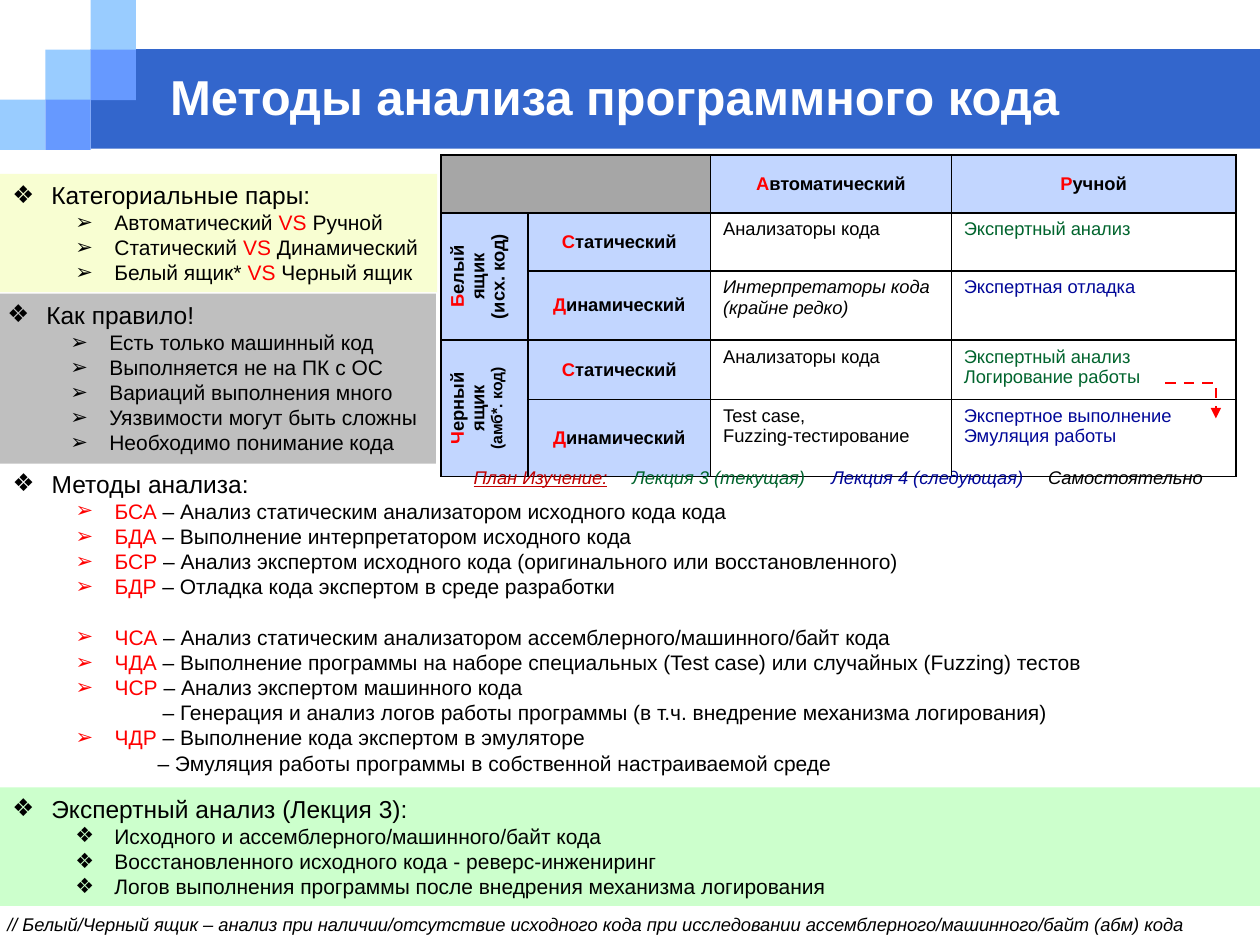
from lxml import etree
from pptx import Presentation
from pptx.dml.color import RGBColor
from pptx.enum.dml import MSO_LINE_DASH_STYLE as DASH
from pptx.enum.shapes import MSO_CONNECTOR as CONNECTOR, MSO_SHAPE as SHAPE
from pptx.enum.text import MSO_ANCHOR as ANCHOR, MSO_AUTO_SIZE as AUTO_SIZE, PP_ALIGN as ALIGN
from pptx.oxml.ns import qn
from pptx.util import Inches, Pt

COLORS = {
    "band": "3366CC", "light": "99CCFF", "medium": "6699FF", "white": "FFFFFF",
    "black": "000000", "red": "FF0000", "plan": "C00000", "green": "00642D",
    "blue": "000798", "cream": "F8FED2", "gray": "BFBFBF", "mint": "CCFFCC",
    "corner": "A6A6A6", "header": "C2D6FF",
}
FONT = "Arial"
DIAMOND, ARROW = "❖", "➢"


def rgb(name):
    """Return the named palette colour."""
    return RGBColor.from_string(COLORS[name])


def add_child(parent, tag, **attributes):
    """Append a DrawingML element and return it."""
    return etree.SubElement(parent, qn(tag), attributes)


def place(shape, left, top, width, height):
    """Move and size a shape, in inches."""
    shape.left, shape.top = Inches(left), Inches(top)
    shape.width, shape.height = Inches(width), Inches(height)


def add_run(paragraph, text, size, color="black", bold=False, italic=False):
    """Add one formatted run."""
    run = paragraph.add_run()
    run.text = text
    font = run.font
    font.name, font.size, font.bold, font.italic = FONT, Pt(size), bold, italic
    font.color.rgb = rgb(color)
    return run


def add_marked(paragraph, text, size, color="black", **style):
    """Add runs, with the parts in square brackets in red."""
    for index, part in enumerate(text.replace("]", "[").split("[")):
        if part:
            add_run(paragraph, part, size, "red" if index % 2 else color, **style)


def set_bullet(paragraph, margin, indent, bullet):
    """Set the indents and the bullet of a paragraph, None for no bullet."""
    properties = paragraph._p.get_or_add_pPr()
    properties.set("marL", str(Inches(margin)))
    properties.set("indent", str(Inches(indent)))
    if bullet:
        add_child(properties, "a:buFont", typeface=FONT)
        add_child(properties, "a:buChar", char=bullet)
    else:
        add_child(properties, "a:buNone")


def add_rectangle(slide, box, color):
    """Add a plain filled rectangle."""
    shape = slide.shapes.add_shape(SHAPE.RECTANGLE, *map(Inches, box))
    shape.shadow.inherit = False
    shape.fill.solid()
    shape.fill.fore_color.rgb = rgb(color)
    shape.line.fill.background()
    return shape


def fill_list(shape, heading, items, bullet=ARROW):
    """Write a heading and its items; an item is text, or (text, margin, space before)."""
    frame = shape.text_frame
    frame.word_wrap, frame.auto_size = True, AUTO_SIZE.SHAPE_TO_FIT_TEXT
    frame.vertical_anchor = ANCHOR.TOP
    entries = [item if isinstance(item, tuple) else (item, None, 0) for item in items]
    for index, (text, margin, gap) in enumerate([(heading, None, 0)] + entries):
        paragraph = frame.add_paragraph() if index else frame.paragraphs[0]
        paragraph.alignment = ALIGN.LEFT
        paragraph.level = min(index, 1)
        paragraph.space_before = Pt(gap)
        if margin:
            set_bullet(paragraph, margin, 0, None)
        elif index:
            set_bullet(paragraph, 0.81, -0.31, bullet)
        else:
            set_bullet(paragraph, 0.31, -0.31, DIAMOND)
        add_marked(paragraph, text, 12 if index else 14)


def build_header(slide, left, top):
    """Draw the title band with its stair of squares and set the title."""
    width, height = 0.36, 0.4
    add_rectangle(slide, (left + 2 * width, top + 0.39, 9.28, 0.79), "band")
    for column, row, color in [(0, 2, "light"), (1, 1, "light"), (2, 0, "light"),
                               (2, 1, "medium"), (1, 2, "medium")]:
        box = (left + column * width, top + row * 0.395, width, height)
        add_rectangle(slide, box, color)
    title = slide.shapes.title
    place(title, left + 1.25, top + 0.5, 8.08, 0.53)
    frame = title.text_frame
    frame.vertical_anchor = ANCHOR.MIDDLE
    frame.paragraphs[0].alignment = ALIGN.LEFT
    add_run(frame.paragraphs[0], "Методы анализа программного кода", 28, "white", bold=True)
    slide.shapes._spTree.append(title._element)


def format_cell(cell, fill, right_border=1):
    """Give a cell its borders and fill."""
    properties = cell._tc.get_or_add_tcPr()
    for side in "LRTB":
        width = Pt(right_border if side == "R" else 1)
        line = add_child(properties, "a:ln" + side, w=str(width))
        solid = add_child(line, "a:solidFill")
        add_child(solid, "a:srgbClr", val=COLORS["black"])
    cell.fill.solid()
    cell.fill.fore_color.rgb = rgb(fill)


def write_cell(cell, lines, alignment, color="black", sizes=(10.5, 10.5), **style):
    """Write one paragraph for each line."""
    frame = cell.text_frame
    for index, line in enumerate(lines):
        paragraph = frame.add_paragraph() if index else frame.paragraphs[0]
        paragraph.alignment = alignment
        add_marked(paragraph, line, sizes[index], color, **style)


def build_matrix(slide, left, top):
    """Build the table of box kinds against analysis kinds."""
    widths, heights = [0.69, 1.45, 1.91, 2.26], [0.46, 0.46, 0.55, 0.47, 0.51]
    table = slide.shapes.add_table(
        len(heights), len(widths), Inches(left), Inches(top),
        Inches(sum(widths)), Inches(sum(heights))).table
    for column, width in zip(table.columns, widths):
        column.width = Inches(width)
    for row, height in zip(table.rows, heights):
        row.height = Inches(height)
    for row in range(len(heights)):
        for column in range(len(widths)):
            fill = "header" if row == 0 or column < 2 else "white"
            if row == 0 and column < 2:
                fill = "corner"
            format_cell(table.cell(row, column), fill, 1.5 if row and not column else 1)
    table.cell(0, 0).merge(table.cell(0, 1))

    labels = {(0, 2): "[А]втоматический", (0, 3): "[Р]учной"}
    labels.update({(row, 1): "[С]татический" if row % 2 else "[Д]инамический"
                   for row in range(1, 5)})
    for position, text in labels.items():
        cell = table.cell(*position)
        cell.vertical_anchor = ANCHOR.MIDDLE
        write_cell(cell, [text], ALIGN.CENTER, bold=True)

    for row, lines, sizes in [(1, ["[Б]елый ящик", "(исх. код)"], (10.5, 10.5)),
                              (3, ["[Ч]ерный ящик", "(амб*. код)"], (10.5, 9))]:
        cell = table.cell(row, 0)
        cell.merge(table.cell(row + 1, 0))
        cell.vertical_anchor = ANCHOR.MIDDLE
        cell._tc.get_or_add_tcPr().set("vert", "vert270")
        write_cell(cell, lines, ALIGN.CENTER, sizes=sizes, bold=True)

    methods = [
        (["Анализаторы кода"], ["Экспертный анализ"]),
        (["Интерпретаторы кода", "(крайне редко)"], ["Экспертная отладка"]),
        (["Анализаторы кода"], ["Экспертный анализ", "Логирование работы"]),
        (["Test case,", "Fuzzing-тестирование"], ["Экспертное выполнение", "Эмуляция работы"]),
    ]
    for row, (automatic, manual) in enumerate(methods, 1):
        write_cell(table.cell(row, 2), automatic, ALIGN.LEFT, italic=row == 2)
        write_cell(table.cell(row, 3), manual, ALIGN.LEFT, "green" if row % 2 else "blue")


def add_note(slide, left, top, width):
    """Add a one-line text box and return its paragraph."""
    box = slide.shapes.add_textbox(Inches(left), Inches(top), Inches(width), Inches(0.28))
    box.text_frame.word_wrap = True
    box.text_frame.auto_size = AUTO_SIZE.SHAPE_TO_FIT_TEXT
    return box.text_frame.paragraphs[0]


def build_legend(slide, left, top):
    """Write the study plan, spread out with tab stops."""
    paragraph = add_note(slide, left, top, 6.22)
    tabs = add_child(paragraph._p.get_or_add_pPr(), "a:tabLst")
    for position in (1.26, 2.84, 4.56):
        add_child(tabs, "a:tab", pos=str(Inches(position)), algn="l")
    add_run(paragraph, "План Изучение:", 10.5, "plan", italic=True).font.underline = True
    for text, color in [("Лекция 3 (текущая)", "green"), ("Лекция 4 (следующая)", "blue"),
                        ("Самостоятельно", "black")]:
        add_run(paragraph, "\t" + text, 10.5, color, italic=True)


def build_step_arrow(slide, left, top, width, height):
    """Draw the dashed elbow arrow between two table cells."""
    arrow = slide.shapes.add_connector(
        CONNECTOR.ELBOW, *map(Inches, (left, top, left + width, top + height)))
    arrow.line.color.rgb = rgb("red")
    arrow.line.width = Pt(1.5)
    arrow.line.dash_style = DASH.DASH
    add_child(arrow.line._get_or_add_ln(), "a:tailEnd", type="triangle")
    properties = arrow._element.spPr
    add_child(properties, "a:effectLst")
    guides = properties.find(qn("a:prstGeom")).get_or_add_avLst()
    add_child(guides, "a:gd", name="adj1", fmla="val 100000")


def main():
    """Build and save the slide."""
    presentation = Presentation()
    presentation.slide_width, presentation.slide_height = Inches(10), Inches(7.5)
    slide = presentation.slides.add_slide(presentation.slide_layouts[1])
    build_header(slide, 0, 0)
    fill_list(add_rectangle(slide, (0, 1.38, 3.47, 0.94), "cream"), "Категориальные пары:", [
        "Автоматический [VS] Ручной", "Статический [VS] Динамический",
        "Белый ящик* [VS] Черный ящик"])
    build_matrix(slide, 3.5, 1.23)
    methods = slide.placeholders[1]
    place(methods, 0, 3.67, 10, 2.56)
    fill_list(methods, "Методы анализа:", [
        "[БСА] – Анализ статическим анализатором исходного кода кода",
        "[БДА] – Выполнение интерпретатором исходного кода",
        "[БСР] – Анализ экспертом исходного кода (оригинального или восстановленного)",
        "[БДР] – Отладка кода экспертом в среде разработки",
        ("[ЧСА] – Анализ статическим анализатором ассемблерного/машинного/байт кода", None, 14.4),
        "[ЧДА] – Выполнение программы на наборе специальных (Test case) или случайных (Fuzzing) тестов",
        "[ЧСР] – Анализ экспертом машинного кода",
        ("– Генерация и анализ логов работы программы (в т.ч. внедрение механизма логирования)", 1.19, 0),
        "[ЧДР] – Выполнение кода экспертом в эмуляторе",
        ("– Эмуляция работы программы в собственной настраиваемой среде", 1.15, 0)])
    footnote = add_note(slide, -0.04, 7.2, 10.04)
    add_run(footnote, "// Белый/Черный ящик – анализ при наличии/отсутствие исходного кода при "
            "исследовании ассемблерного/машинного/байт (абм) кода", 10.5, italic=True)
    build_legend(slide, 3.66, 3.65)
    fill_list(add_rectangle(slide, (-0.04, 2.33, 3.5, 1.35), "gray"), "Как правило!", [
        "Есть только машинный код", "Выполняется не на ПК с ОС", "Вариаций выполнения много",
        "Уязвимости могут быть сложны", "Необходимо понимание кода"])
    fill_list(add_rectangle(slide, (0, 6.25, 10, 0.94), "mint"), "Экспертный анализ (Лекция 3):", [
        "Исходного и ассемблерного/машинного/байт кода",
        "Восстановленного исходного кода - реверс-инжениринг",
        "Логов выполнения программы после внедрения механизма логирования"], DIAMOND)
    build_step_arrow(slide, 9.25, 3.04, 0.4, 0.28)
    presentation.save("out.pptx")


if __name__ == "__main__":
    main()
